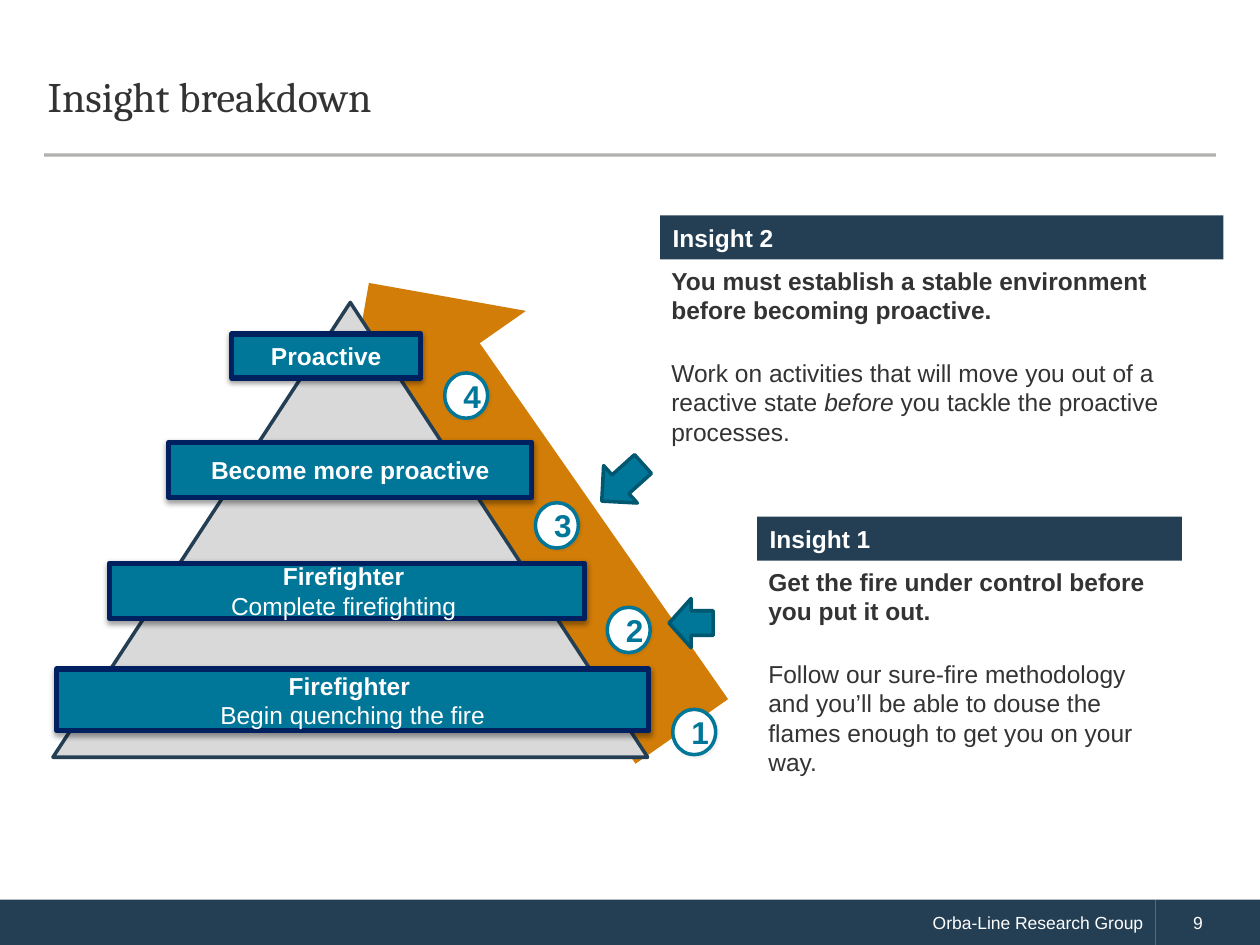
from lxml import etree
from pptx import Presentation
from pptx import util as u
from pptx.dml import color
from pptx.enum import shapes, text
from pptx.oxml import ns

HUES = {"navy": "243F54", "edge": "002060", "teal": "007698", "deep": "005770",
        "gold": "D17D08", "grey": "D9D9D9", "ink": "333333", "rule": "45433E",
        "white": "FFFFFF", "black": "000000"}
KINDS = shapes.MSO_SHAPE
ALIGN = text.PP_ALIGN


def rgb(hue):
    """Return the named colour."""
    return color.RGBColor.from_string(HUES[hue])


def node(parent, tag, **attrs):
    """Append a DrawingML element and return it."""
    return etree.SubElement(parent, ns.qn("a:" + tag), {k: str(v) for k, v in attrs.items()})


def shade(shape, alpha, blur, dist, turn):
    """Give a shape a black outer shadow, sized in points."""
    fx = shape._element.spPr.find(ns.qn("a:effectLst"))
    outer = node(fx, "outerShdw", blurRad=u.Pt(blur), dist=u.Pt(dist),
                 dir=turn * 60000, algn="ctr", rotWithShape=0)
    node(node(outer, "srgbClr", val=HUES["black"]), "alpha", val=alpha * 1000)


def block(slide, kind, box, fill, line=None, width=2, turn=0):
    """Draw a filled preset shape in a box given in inches."""
    shape = slide.shapes.add_shape(kind, *map(u.Inches, box))
    shape.shadow.inherit = False
    shape.fill.solid()
    shape.fill.fore_color.rgb = rgb(fill)
    shape.rotation = turn
    if line:
        shape.line.color.rgb = rgb(line)
        shape.line.width = u.Pt(width)
    else:
        shape.line.fill.background()
    return shape


def write(shape, paras, size, hue="white", align=ALIGN.LEFT, font="Arial", gap=0,
          anchor=text.MSO_ANCHOR.MIDDLE):
    """Fill a shape with paragraphs of (text, style) runs, style holding b or i."""
    frame = shape.text_frame
    frame.word_wrap = True
    frame.vertical_anchor = anchor
    for n, runs in enumerate(paras):
        para = frame.add_paragraph() if n else frame.paragraphs[0]
        para.alignment = align
        para.space_before = u.Pt(gap if n else 0)
        for words, style in runs:
            run = para.add_run()
            run.text = words
            run.font.name = font
            run.font.size = u.Pt(size)
            run.font.bold = "b" in style
            run.font.italic = "i" in style
            run.font.color.rgb = rgb(hue)


def header(slide, box):
    """Place the title with the rule under it."""
    x, y, w, h = box
    title = slide.shapes.add_textbox(*map(u.Inches, box))
    write(title, [[("Insight breakdown", "")]], 24, "ink", font="Cambria")
    ends = (x + 0.07, y + h - 0.01, x + w - 0.06, y + h - 0.01)
    rule = slide.shapes.add_connector(shapes.MSO_CONNECTOR.STRAIGHT, *map(u.Inches, ends))
    rule.line.color.rgb = rgb("rule")
    rule.line.width = u.Pt(1.75)
    node(rule._element.spPr.find(".//" + ns.qn("a:srgbClr")), "alpha", val=42000)
    node(rule._element.spPr, "effectLst")


def footer(slide, box):
    """Place the footer band with the group name and page number."""
    x, y, w, h = box
    split = 9.17
    name = block(slide, KINDS.RECTANGLE, (x, y, split, h), "navy")
    write(name, [[("Orba-Line Research Group", "")]], 10, align=ALIGN.RIGHT)
    page = block(slide, KINDS.RECTANGLE, (x + split, y, w - split, h), "navy")
    page.text_frame.margin_left = u.Inches(0.3)
    write(page, [[("9", "")]], 10)


def insight(slide, box, head, paras):
    """Place a headed insight panel."""
    x, y, w, h = box
    bar = 0.35
    write(block(slide, KINDS.RECTANGLE, (x, y, w, bar), "navy"), [[(head, "b")]], 14)
    body = slide.shapes.add_textbox(*map(u.Inches, (x - 0.01, y + bar, w - 0.01, h - bar)))
    write(body, paras, 14, "ink", gap=19, anchor=text.MSO_ANCHOR.TOP)


def pyramid(slide, box):
    """Place the pyramid with its climbing arrow, levels, steps and pointers."""
    x, y, w, h = box
    block(slide, KINDS.RIGHT_ARROW, (x + 1.58, y + 0.73, 4.34, 1.79), "gold", turn=235.1)
    block(slide, KINDS.ISOSCELES_TRIANGLE, box, "grey", "navy")

    levels = [
        (0.03, 2.91, 4.7, 0.49, [[("Firefighter ", "b")], [("Begin quenching the fire", "")]]),
        (0.45, 2.07, 3.77, 0.44, [[("Firefighter ", "b")], [("Complete firefighting ", "")]]),
        (0.92, 1.11, 2.88, 0.44, [[("Become more proactive", "b")]]),
        (1.42, 0.25, 1.5, 0.35, [[(" ", ""), ("Proactive ", "b")]])]
    for dx, dy, wide, tall, paras in levels:
        bar = block(slide, KINDS.RECTANGLE, (x + dx, y + dy, wide, tall), "teal", "edge", 3)
        shade(bar, 38, 3.1, 1.6, 90)
        write(bar, paras, 14, align=ALIGN.CENTER)

    steps = [(4.92, 3.23), (4.4, 2.42), (3.83, 1.59), (3.11, 0.56)]
    for n, (dx, dy) in enumerate(steps, 1):
        dot = block(slide, KINDS.OVAL, (x + dx, y + dy, 0.34, 0.36), "white", "teal")
        shade(dot, 5, 1, 1, 45)
        write(dot, [[(str(n), "b")]], 18, "teal", ALIGN.CENTER)

    for dx, dy, wide, tall, turn in [(4.3, 1.23, 0.44, 0.4, 318), (4.89, 2.35, 0.35, 0.39, 0)]:
        block(slide, KINDS.LEFT_ARROW, (x + dx, y + dy, wide, tall), "teal", "deep", turn=turn)


def main():
    """Build the slide and save it."""
    deck = Presentation()
    deck.slide_width, deck.slide_height = u.Inches(10), u.Inches(7.5)
    slide = deck.slides.add_slide(deck.slide_layouts[6])
    footer(slide, (0, 7.14, 10, 0.37))
    header(slide, (0.28, 0.28, 9.43, 0.96))
    insight(slide, (5.24, 1.71, 4.47, 1.86), "Insight 2", [
        [("You must establish a stable environment before becoming proactive.", "b")],
        [("Work on activities that will move you out of a reactive state ", ""),
         ("before", "i"), (" you tackle the proactive processes.", "")]])
    insight(slide, (6.01, 4.1, 3.37, 1.86), "Insight 1", [
        [("Get the fire under control before you put it out.", "b")],
        [("Follow our sure-fire methodology and you’ll be able to douse the "
          "flames enough to get you on your way.", "")]])
    pyramid(slide, (0.42, 2.4, 4.72, 3.61))
    deck.save("out.pptx")


if __name__ == "__main__":
    main()
